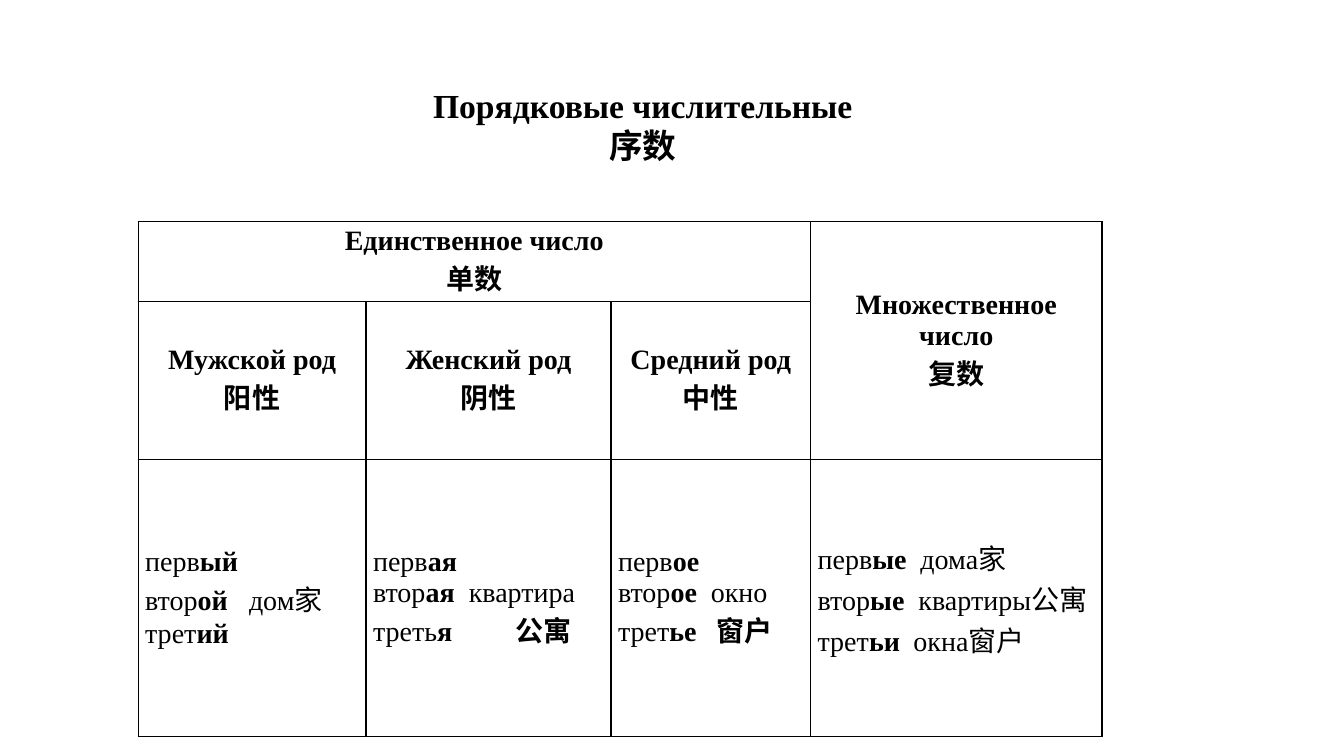
from dataclasses import dataclass

from lxml.etree import SubElement
from pptx import Presentation
from pptx.dml.color import RGBColor
from pptx.enum.text import MSO_ANCHOR, MSO_AUTO_SIZE, PP_ALIGN
from pptx.oxml.ns import qn
from pptx.util import Inches, Pt


@dataclass(frozen=True)
class Theme:
    font: str = "Times New Roman"
    ink: RGBColor = RGBColor(0, 0, 0)
    title_size: int = 24
    table_size: int = 20
    border_width: int = 1


class SlideBuilder:
    def __init__(self, slide, theme):
        self.slide = slide
        self.theme = theme

    def write_line(self, paragraph, pieces, size, alignment=PP_ALIGN.LEFT, tab=None):
        """Write (text, bold) pieces, with an optional tab stop in inches."""
        paragraph.alignment = alignment
        if tab:
            tab_list = SubElement(paragraph._p.get_or_add_pPr(), qn("a:tabLst"))
            SubElement(tab_list, qn("a:tab"), pos=str(Inches(tab)), algn="l")
        for text, bold in pieces:
            run = paragraph.add_run()
            run.text = text
            values = {"name": self.theme.font, "size": Pt(size), "bold": bold}
            for name, value in values.items():
                setattr(run.font, name, value)
            run.font.color.rgb = self.theme.ink

    def write_lines(self, frame, lines, size, alignment=PP_ALIGN.LEFT):
        for index, (pieces, tab) in enumerate(lines):
            paragraph = frame.add_paragraph() if index else frame.paragraphs[0]
            self.write_line(paragraph, pieces, size, alignment, tab)

    def write_heading(self, frame, texts, size):
        lines = [([(text, True)], None) for text in texts]
        self.write_lines(frame, lines, size, PP_ALIGN.CENTER)

    def title(self, texts, left, top, width, height):
        box = self.slide.shapes.add_textbox(
            Inches(left), Inches(top), Inches(width), Inches(height))
        frame = box.text_frame
        frame.word_wrap = True
        frame.auto_size = MSO_AUTO_SIZE.SHAPE_TO_FIT_TEXT
        self.write_heading(frame, texts, self.theme.title_size)

    def style_cell(self, cell):
        values = {
            "vertical_anchor": MSO_ANCHOR.MIDDLE,
            "margin_left": Inches(0.07), "margin_right": Inches(0.07),
            "margin_top": 0, "margin_bottom": 0,
        }
        for name, value in values.items():
            setattr(cell, name, value)
        properties = cell._tc.get_or_add_tcPr()
        for side in ("lnL", "lnR", "lnT", "lnB"):
            line = SubElement(properties, qn(f"a:{side}"),
                              w=str(Pt(self.theme.border_width)))
            fill = SubElement(line, qn("a:solidFill"))
            SubElement(fill, qn("a:srgbClr"), val=str(self.theme.ink))
        cell.fill.background()

    def table(self, left, top, widths, heights):
        table = self.slide.shapes.add_table(
            len(heights), len(widths), Inches(left), Inches(top),
            Inches(sum(widths)), Inches(sum(heights))).table
        table.first_row = table.horz_banding = False
        for column, width in zip(table.columns, widths):
            column.width = Inches(width)
        for row, height in zip(table.rows, heights):
            row.height = Inches(height)
        for cell in table.iter_cells():
            self.style_cell(cell)
        return table


TITLE = ("Порядковые числительные", "序数")

# Heading cells: row, column, row span, column span, lines
HEADINGS = [
    (0, 0, 1, 3, ("Единственное число", "单数")),
    (0, 3, 2, 1, ("Множественное число", "复数")),
    (1, 0, 1, 1, ("Мужской род", "阳性")),
    (1, 1, 1, 1, ("Женский род", "阴性")),
    (1, 2, 1, 1, ("Средний род", "中性")),
]

# Example columns: stem, bold ending, noun, bold noun, tab stop of the noun
EXAMPLES = [
    [("перв", "ый", "", False, None),
     ("втор", "ой", "дом家", False, 1.03),
     ("трет", "ий", "", False, None)],
    [("перв", "ая", "", False, None),
     ("втор", "ая", "квартира", False, 0.95),
     ("треть", "я", "公寓", True, 1.41)],
    [("перв", "ое", "", False, None),
     ("втор", "ое", "окно", False, 0.92),
     ("трет", "ье", "窗户", True, 0.98)],
    [("перв", "ые", "дома家", False, 1.02),
     ("втор", "ые", "квартиры公寓", False, 1.0),
     ("трет", "ьи", "окна窗户", False, 0.95)],
]


def example_line(stem, ending, noun, noun_bold, tab):
    pieces = [(stem, False), (ending, True)]
    if noun:
        pieces.append(("\t" + noun, noun_bold))
    return pieces, tab


def main():
    presentation = Presentation()
    presentation.slide_width = Inches(13.33)
    presentation.slide_height = Inches(7.5)
    slide = presentation.slides.add_slide(presentation.slide_layouts[6])
    theme = Theme()
    builder = SlideBuilder(slide, theme)

    # Table grid
    table = builder.table(1.37, 2.2, (2.26, 2.43, 1.98, 2.89), (0.79, 1.57, 2.75))

    # Number and gender headings
    for row, column, row_span, column_span, texts in HEADINGS:
        cell = table.cell(row, column)
        if row_span * column_span > 1:
            cell.merge(table.cell(row + row_span - 1, column + column_span - 1))
        builder.write_heading(cell.text_frame, texts, theme.table_size)

    # Ordinal forms
    for column, examples in enumerate(EXAMPLES):
        lines = [example_line(*example) for example in examples]
        builder.write_lines(table.cell(2, column).text_frame, lines, theme.table_size)

    # Title
    builder.title(TITLE, 3.04, 0.79, 6.67, 0.91)

    presentation.save("out.pptx")


if __name__ == "__main__":
    main()
